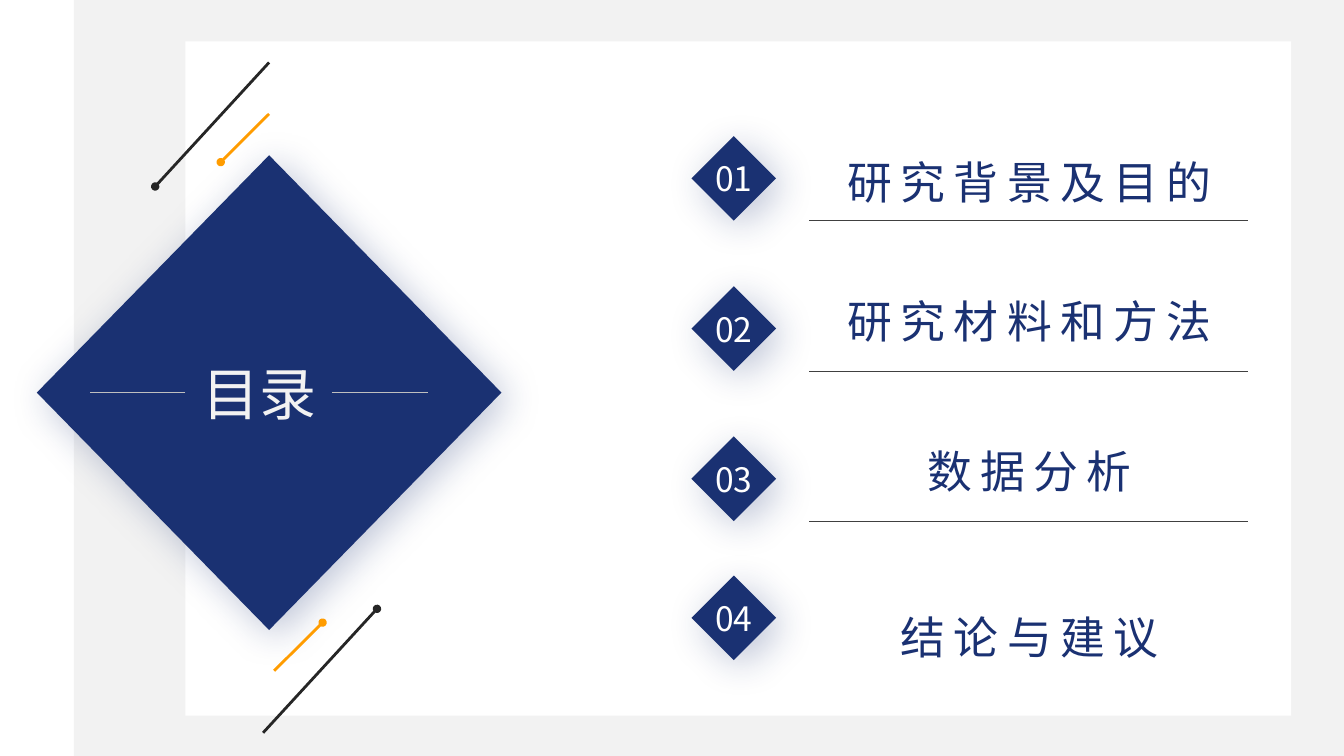
"""Build a contents slide with a large diamond title and four numbered topics."""
from dataclasses import dataclass

from lxml.etree import SubElement
from pptx import Presentation
from pptx.dml.color import RGBColor
from pptx.enum.shapes import MSO_CONNECTOR, MSO_SHAPE
from pptx.enum.text import MSO_ANCHOR, MSO_AUTO_SIZE, PP_ALIGN
from pptx.oxml.ns import qn
from pptx.shapes.autoshape import Shape
from pptx.slide import Slide
from pptx.text.text import TextFrame
from pptx.util import Emu, Pt

NAVY = RGBColor(0x1A, 0x31, 0x72)
ORANGE = RGBColor(0xFF, 0x9C, 0x00)
BLACK = RGBColor(0x26, 0x26, 0x26)
DARK_GREY = RGBColor(0x40, 0x40, 0x40)
MID_GREY = RGBColor(0xBF, 0xBF, 0xBF)
PALE_GREY = RGBColor(0xF2, 0xF2, 0xF2)
WHITE = RGBColor(0xFF, 0xFF, 0xFF)

RECTANGLE, DIAMOND = MSO_SHAPE.RECTANGLE, MSO_SHAPE.DIAMOND
STRAIGHT = MSO_CONNECTOR.STRAIGHT
TOP, MIDDLE = MSO_ANCHOR.TOP, MSO_ANCHOR.MIDDLE
CENTER = PP_ALIGN.CENTER
NO_AUTOFIT = MSO_AUTO_SIZE.NONE

COLUMNS, ROWS = 160, 90
CELL = 76200
TITLE_ONLY = 5
TOPIC_FONT, TITLE_FONT = "Noto Sans CJK JP", "Arial"
BADGE_LEFT, BADGE_SIZE = 82.32, 10.08
FIRST_BADGE, BADGE_PITCH = 16.2, 17.88


@dataclass(frozen=True)
class Area:
    """A rectangle in grid cells."""
    left: float
    top: float
    width: float
    height: float

    def lengths(self) -> tuple[Emu, ...]:
        """Return left, top, width and height as slide lengths."""
        return tuple(map(cells, (self.left, self.top, self.width, self.height)))


@dataclass(frozen=True)
class Stroke:
    """A straight line between two grid points."""
    start: tuple[float, float]
    end: tuple[float, float]
    color: RGBColor
    weight: float = 0.5
    dotted_end: bool = False


@dataclass(frozen=True)
class Topic:
    """A numbered entry of the contents list."""
    label: str
    badge_top: float
    label_offset: float = 0.24
    line_spacing: float = 1.0
    underlined: bool = True


PANELS = (
    (Area(0, 0, 8.8, ROWS), WHITE),
    (Area(8.8, 0, COLUMNS - 8.8, ROWS), PALE_GREY),
    (Area(22.08, 4.92, 131.64, 80.28), WHITE),
)
TOPICS = (
    Topic("研究背景及目的", FIRST_BADGE, label_offset=-1.56, line_spacing=1.5),
    Topic("研究材料和方法", FIRST_BADGE + BADGE_PITCH),
    Topic("数据分析", FIRST_BADGE + 2 * BADGE_PITCH),
    Topic("结论与建议", 68.52, line_spacing=1.5, underlined=False),
)
STROKES = (
    Stroke((22.08, 46.7), (10.68, 46.7), MID_GREY),
    Stroke((39.5, 46.7), (50.9, 46.7), MID_GREY),
    Stroke((32.04, 7.44), (18.48, 22.2), BLACK, 2, True),
    Stroke((32.04, 13.56), (26.28, 19.3), ORANGE, 2, True),
    Stroke((31.32, 87.24), (44.88, 72.48), BLACK, 2, True),
    Stroke((32.64, 79.86), (38.4, 74.12), ORANGE, 2, True),
)


def cells(count: float) -> Emu:
    """Convert grid cells to a slide length."""
    return Emu(round(count * CELL))


def write(frame: TextFrame, text: str, *, size: float, color: RGBColor,
          font: str = TOPIC_FONT, anchor: MSO_ANCHOR = MIDDLE,
          line_spacing: float = 1.0, tracking: float = 0) -> None:
    """Write one centred, unwrapped line of text."""
    frame.word_wrap = False
    frame.auto_size = NO_AUTOFIT
    frame.vertical_anchor = anchor
    para = frame.paragraphs[0]
    para.alignment = CENTER
    para.line_spacing = line_spacing
    span = para.add_run()
    span.text = text
    span.font.size = Pt(size)
    span.font.color.rgb = color
    span.font.name = font
    properties = span.font._element
    properties.set("spc", str(round(tracking * 100)))
    SubElement(properties, qn("a:ea"), typeface=font)


def add_block(slide: Slide, preset: MSO_SHAPE, area: Area, color: RGBColor) -> Shape:
    """Add a filled shape without outline or shadow."""
    block = slide.shapes.add_shape(preset, *area.lengths())
    block.fill.solid()
    block.fill.fore_color.rgb = color
    block.line.fill.background()
    block.shadow.inherit = False
    return block


def add_diamond(slide: Slide, area: Area) -> Shape:
    """Add a navy diamond with a soft shadow to the lower right."""
    diamond = add_block(slide, DIAMOND, area, NAVY)
    effects = diamond.element.spPr.find(qn("a:effectLst"))
    shadow = SubElement(effects, qn("a:outerShdw"), blurRad=str(Pt(28)),
                        dist=str(Pt(7)), dir="2700000", algn="tl", rotWithShape="0")
    tint = SubElement(shadow, qn("a:srgbClr"), val=str(NAVY))
    SubElement(tint, qn("a:alpha"), val="27000")
    return diamond


def add_stroke(slide: Slide, stroke: Stroke) -> None:
    """Add a line, with a dot at its end where asked."""
    line = slide.shapes.add_connector(STRAIGHT, *map(cells, stroke.start + stroke.end))
    line.line.color.rgb = stroke.color
    line.line.width = Pt(stroke.weight)
    properties = line.element.spPr
    if stroke.dotted_end:
        SubElement(properties.find(qn("a:ln")), qn("a:tailEnd"), type="oval")
    SubElement(properties, qn("a:effectLst"))


def add_topic(slide: Slide, number: int, topic: Topic) -> None:
    """Add a numbered badge, its label and its underline."""
    badge = add_diamond(slide, Area(BADGE_LEFT, topic.badge_top, BADGE_SIZE, BADGE_SIZE))
    write(badge.text_frame, f"{number:02}", size=24, color=WHITE)
    area = Area(95.52, topic.badge_top + topic.label_offset, 54.12, 9.84)
    box = slide.shapes.add_textbox(*area.lengths())
    write(box.text_frame, topic.label, size=32, color=NAVY, anchor=TOP,
          line_spacing=topic.line_spacing, tracking=6)
    if topic.underlined:
        bottom = topic.badge_top + BADGE_SIZE
        add_stroke(slide, Stroke((96.36, bottom), (148.6, bottom), DARK_GREY))


def add_title(slide: Slide, text: str) -> None:
    """Place the title in front of its large diamond."""
    add_diamond(slide, Area(4.38, 18.48, 55.32, 56.52))
    title = slide.shapes.title
    title.left, title.top, title.width, title.height = Area(22.08, 42.48, 17.52, 8.52).lengths()
    write(title.text_frame, text, size=40.7, color=PALE_GREY, font=TITLE_FONT)
    title.element.getparent().append(title.element)


def main() -> None:
    """Build and save the deck."""
    deck = Presentation()
    deck.slide_width, deck.slide_height = cells(COLUMNS), cells(ROWS)
    page = deck.slides.add_slide(deck.slide_layouts[TITLE_ONLY])
    page.background.fill.solid()
    page.background.fill.fore_color.rgb = PALE_GREY
    for area, color in PANELS:
        add_block(page, RECTANGLE, area, color)
    for number, topic in enumerate(TOPICS, start=1):
        add_topic(page, number, topic)
    add_title(page, "目录")
    for stroke in STROKES:
        add_stroke(page, stroke)
    deck.save("out.pptx")


if __name__ == "__main__":
    main()
